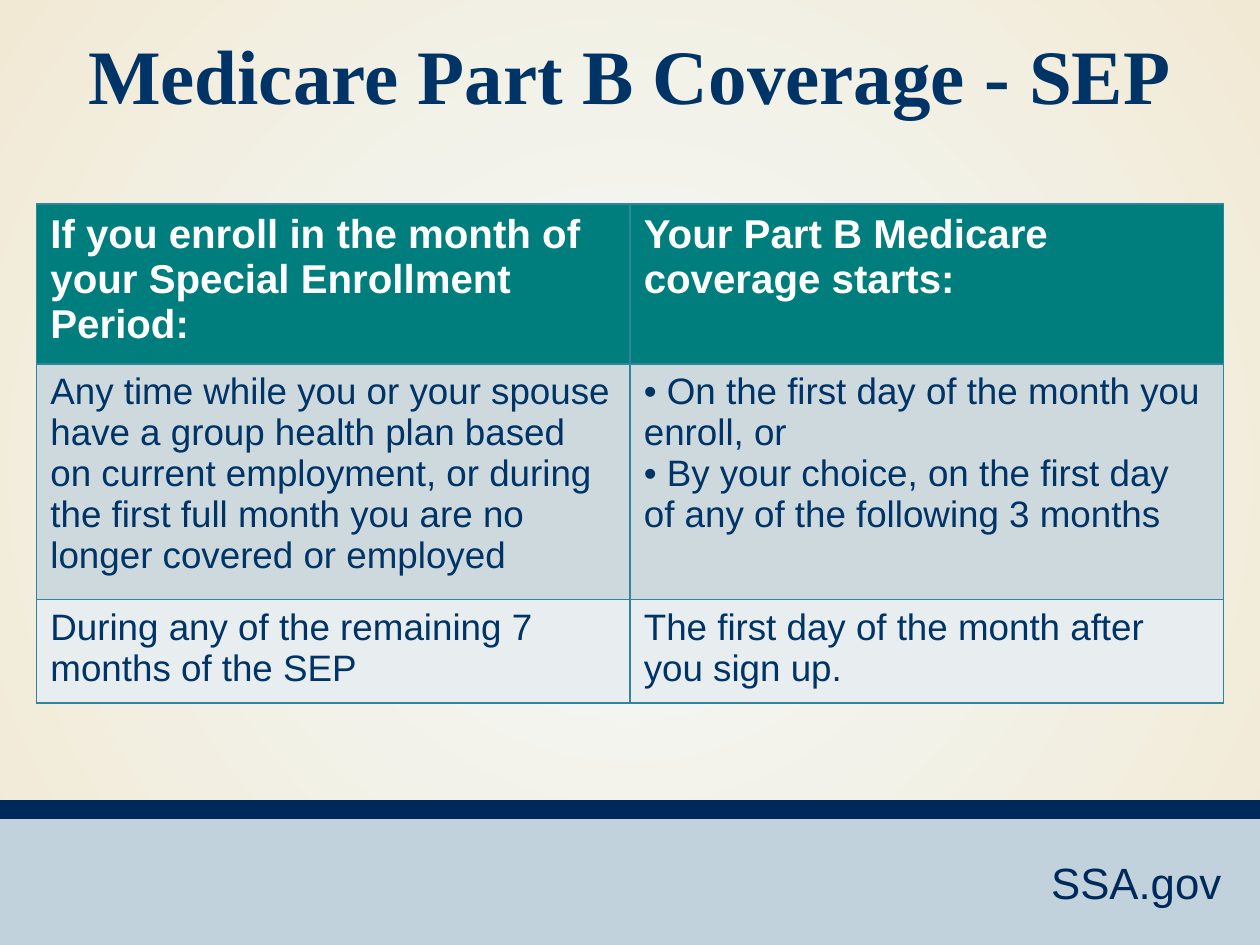
import pptx
import pptx.dml.color
import pptx.enum.shapes
import pptx.enum.text
import pptx.oxml
import pptx.oxml.ns
import pptx.util
from dataclasses import dataclass

Inches = pptx.util.Inches
ANCHOR = pptx.enum.text.MSO_ANCHOR
ALIGN = pptx.enum.text.PP_ALIGN
qn = pptx.oxml.ns.qn


@dataclass(frozen=True)
class Theme:
    glow: str = "F3FAFB"
    sand: str = "F2E9D5"
    footer: str = "C1D2DC"
    navy: str = "00295B"
    ink: str = "003366"
    white: str = "FFFFFF"
    header: str = "007D7D"
    bands: tuple = ("CED9DE", "E8EDEF")
    border: str = "31859B"
    title_font: str = "Times New Roman"
    body_font: str = "Arial"
    title_size: int = 44
    site_size: int = 25
    header_size: int = 23
    body_size: int = 21


THEME = Theme()
SLIDE_WIDTH = 10

ENROLLMENT = [
    ("If you enroll in the month of your Special Enrollment Period:",
     "Your Part B Medicare coverage starts:"),
    ("Any time while you or your spouse have a group health plan based on "
     "current employment, or during the first full month you are no longer "
     "covered or employed",
     "• On the first day of the month you enroll, or\n"
     "• By your choice, on the first day of any of the following 3 months"),
    ("During any of the remaining 7 months of the SEP",
     "The first day of the month after you sign up."),
]
ROW_HEIGHTS = (1.19, 1.74, 0.77)


def rgb(value):
    return pptx.dml.color.RGBColor.from_string(value)


def style_text(frame, font, size, color, bold=False, align=ALIGN.LEFT):
    for paragraph in frame.paragraphs:
        paragraph.alignment = align
        for run in paragraph.runs:
            run.font.name = font
            run.font.size = pptx.util.Pt(size)
            run.font.bold = bold
            run.font.color.rgb = rgb(color)


def paint_background(slide):
    fill = slide.background.fill
    fill.gradient()
    for stop, color in zip(fill.gradient_stops, (THEME.glow, THEME.sand)):
        stop.color.rgb = rgb(color)
    # Turn the linear gradient into a circle around the slide's centre
    gradient = next(slide.element.iter(qn("a:gradFill")))
    linear = gradient.find(qn("a:lin"))
    circle = pptx.oxml.parse_xml(
        f'<a:path {pptx.oxml.ns.nsdecls("a")} path="circle">'
        '<a:fillToRect l="50000" t="50000" r="50000" b="50000"/></a:path>')
    gradient.replace(linear, circle)


def add_band(slide, top, height, color):
    band = slide.shapes.add_shape(
        pptx.enum.shapes.MSO_SHAPE.RECTANGLE,
        0, Inches(top), Inches(SLIDE_WIDTH), Inches(height))
    band.shadow.inherit = False
    band.fill.solid()
    band.fill.fore_color.rgb = rgb(color)
    band.line.fill.background()


def add_label(slide, text, left, top, width, height, anchor, **style):
    label = slide.shapes.add_textbox(
        Inches(left), Inches(top), Inches(width), Inches(height))
    frame = label.text_frame
    frame.word_wrap = True
    frame.vertical_anchor = anchor
    frame.text = text
    style_text(frame, **style)


def outline_cell(cell):
    properties = cell._tc.get_or_add_tcPr()
    for position, side in enumerate(("lnL", "lnR", "lnT", "lnB")):
        properties.insert(position, pptx.oxml.parse_xml(
            f'<a:{side} {pptx.oxml.ns.nsdecls("a")} w="12700"><a:solidFill>'
            f'<a:srgbClr val="{THEME.border}"/></a:solidFill></a:{side}>'))


def add_enrollment_table(slide, left, top, width):
    table = slide.shapes.add_table(
        len(ENROLLMENT), len(ENROLLMENT[0]), Inches(left), Inches(top),
        Inches(width), Inches(sum(ROW_HEIGHTS))).table
    for row_index, texts in enumerate(ENROLLMENT):
        table.rows[row_index].height = Inches(ROW_HEIGHTS[row_index])
        is_header = row_index == 0
        for column_index, text in enumerate(texts):
            cell = table.cell(row_index, column_index)
            cell.margin_left = cell.margin_right = Inches(0.11)
            cell.margin_top = cell.margin_bottom = Inches(0.06)
            cell.fill.solid()
            cell.fill.fore_color.rgb = rgb(
                THEME.header if is_header else THEME.bands[row_index - 1])
            outline_cell(cell)
            cell.text_frame.text = text
            style_text(cell.text_frame, THEME.body_font,
                       THEME.header_size if is_header else THEME.body_size,
                       THEME.white if is_header else THEME.ink, is_header)


def main():
    deck = pptx.Presentation()
    deck.slide_width, deck.slide_height = Inches(SLIDE_WIDTH), Inches(7.5)
    slide = deck.slides.add_slide(deck.slide_layouts[6])
    paint_background(slide)

    # Footer
    add_band(slide, 6.45, 1.05, THEME.footer)
    add_band(slide, 6.35, 0.15, THEME.navy)
    add_label(slide, "SSA.gov", 6.72, 6.74, 3.07, 0.52, ANCHOR.MIDDLE,
              font=THEME.body_font, size=THEME.site_size,
              color=THEME.navy, align=ALIGN.RIGHT)

    # Title
    add_label(slide, "Medicare Part B Coverage - SEP",
              0, 0.17, SLIDE_WIDTH, 0.83, ANCHOR.BOTTOM,
              font=THEME.title_font, size=THEME.title_size,
              color=THEME.ink, bold=True, align=ALIGN.CENTER)

    # Enrollment periods and coverage starts
    add_enrollment_table(slide, 0.29, 1.62, 9.42)

    deck.save("out.pptx")


if __name__ == "__main__":
    main()
